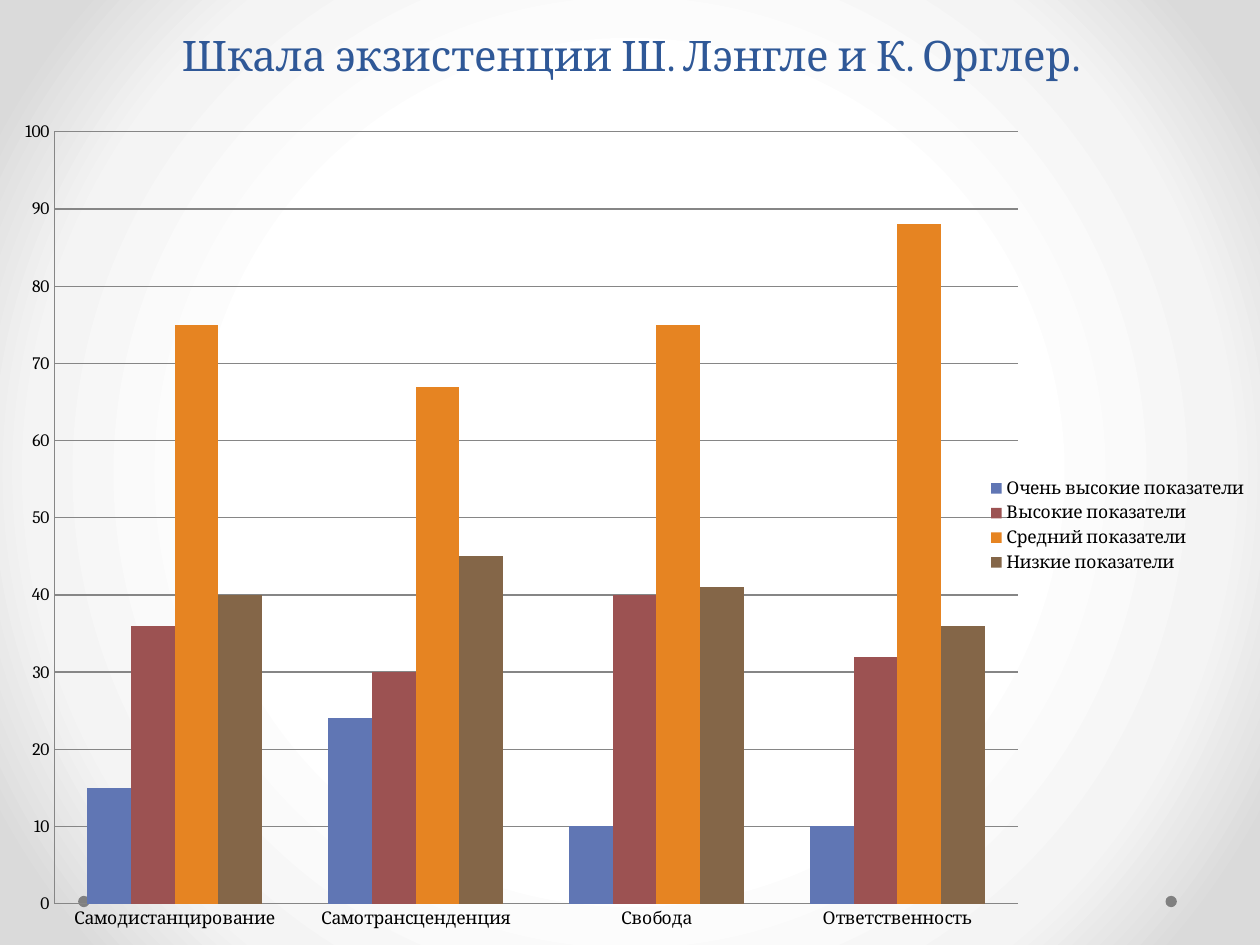
from lxml import etree
from pptx import Presentation
from pptx.chart.data import CategoryChartData
from pptx.dml.color import RGBColor
from pptx.enum.chart import XL_CHART_TYPE as CT, XL_LEGEND_POSITION as LP, XL_TICK_MARK as TM
from pptx.enum.shapes import MSO_SHAPE
from pptx.enum.text import MSO_ANCHOR, PP_ALIGN
from pptx.oxml import parse_xml
from pptx.oxml.ns import nsdecls, qn
from pptx.util import Inches, Pt

FONT = "Cambria"
COLORS = {
    "title": "2F5897", "text": "000000", "dot": "808080", "line": "868686",
    "very_high": "6076B4", "high": "9C5252", "medium": "E68422", "low": "846648",
}
BACKGROUND_STOPS = [(50, "FFFFFF"), (76, "F4F4F4"), (92, "DADADA")]
CATEGORIES = ["Самодистанцирование", "Самотрансценденция", "Свобода", "Ответственность"]
SERIES = [
    ("Очень высокие показатели", (15, 24, 10, 10), "very_high"),
    ("Высокие показатели", (36, 30, 40, 32), "high"),
    ("Средний показатели", (75, 67, 75, 88), "medium"),
    ("Низкие показатели", (40, 45, 41, 36), "low"),
]
PLOT_LAYOUT = {"x": 0.043, "y": 0.031, "w": 0.765, "h": 0.92}


def rgb(name):
    return RGBColor.from_string(COLORS[name])


def set_background(slide):
    """Fill the slide with a circular gradient around its centre."""
    slide.background.fill.solid()
    solid = slide._element.find(".//" + qn("p:bgPr")).find(qn("a:solidFill"))
    stops = "".join(
        f'<a:gs pos="{pos * 1000}"><a:srgbClr val="{color}"/></a:gs>'
        for pos, color in BACKGROUND_STOPS
    )
    gradient = parse_xml(
        f'<a:gradFill {nsdecls("a")} rotWithShape="1"><a:gsLst>{stops}</a:gsLst>'
        '<a:path path="circle"><a:fillToRect l="50000" t="50000" r="50000" b="50000"/>'
        "</a:path></a:gradFill>"
    )
    solid.getparent().replace(solid, gradient)


def add_dot(slide, left, top, size):
    sp = slide.shapes.add_shape(MSO_SHAPE.OVAL, left, top, size, size)
    sp.shadow.inherit = False
    sp.fill.solid()
    sp.fill.fore_color.rgb = rgb("dot")
    sp.line.fill.background()


def add_title(slide, left, top, width, height):
    tf = slide.shapes.add_textbox(left, top, width, height).text_frame
    tf.word_wrap = True
    tf.vertical_anchor = MSO_ANCHOR.BOTTOM
    tf.text = "Шкала экзистенции Ш. Лэнгле и К. Орглер."
    p = tf.paragraphs[0]
    p.alignment = PP_ALIGN.CENTER
    font = p.runs[0].font
    font.name, font.size = FONT, Pt(24)
    font.color.rgb = rgb("title")


def set_plot_layout(chart):
    """Fix the inner plot area as fractions of the chart."""
    plot_area = chart._chartSpace.chart.plotArea
    for old in plot_area.findall(qn("c:layout")):
        plot_area.remove(old)
    layout = etree.Element(qn("c:layout"))
    manual = etree.SubElement(layout, qn("c:manualLayout"))
    settings = {"layoutTarget": "inner", "xMode": "edge", "yMode": "edge", **PLOT_LAYOUT}
    for tag, value in settings.items():
        etree.SubElement(manual, qn(f"c:{tag}")).set("val", str(value))
    plot_area.insert(0, layout)


def style_line(line):
    line.color.rgb = rgb("line")
    line.width = Pt(0.75)


def add_scale_chart(slide, left, top, width, height):
    data = CategoryChartData()
    data.categories = CATEGORIES
    for name, values, _ in SERIES:
        data.add_series(name, values)
    chart = slide.shapes.add_chart(
        CT.COLUMN_CLUSTERED, left, top, width, height, data
    ).chart
    chart.has_title = False
    chart.font.name, chart.font.size = FONT, Pt(10)
    chart.font.color.rgb = rgb("text")
    chart.has_legend = True
    chart.legend.position = LP.RIGHT
    chart.legend.include_in_layout = False

    plot = chart.plots[0]
    plot.gap_width, plot.overlap = 150, 0
    plot.vary_by_categories = False
    for series, (_, _, color) in zip(plot.series, SERIES):
        series.format.fill.solid()
        series.format.fill.fore_color.rgb = rgb(color)

    for axis in (chart.category_axis, chart.value_axis):
        axis.major_tick_mark = axis.minor_tick_mark = TM.NONE
        style_line(axis.format.line)
    axis = chart.value_axis
    axis.minimum_scale, axis.maximum_scale, axis.major_unit = 0, 100, 10
    axis.has_major_gridlines = True
    style_line(axis.major_gridlines.format.line)
    set_plot_layout(chart)


def main():
    prs = Presentation()
    prs.slide_width, prs.slide_height = Inches(10), Inches(7.5)
    slide = prs.slides.add_slide(prs.slide_layouts[6])
    set_background(slide)
    for left in (9.25, 0.62):
        add_dot(slide, Inches(left), Inches(7.11), Inches(0.09))
    add_title(slide, Inches(0.51), Inches(0), Inches(9), Inches(0.68))
    add_scale_chart(slide, Inches(0), Inches(0.84), Inches(10), Inches(6.66))
    prs.save("out.pptx")


if __name__ == "__main__":
    main()
